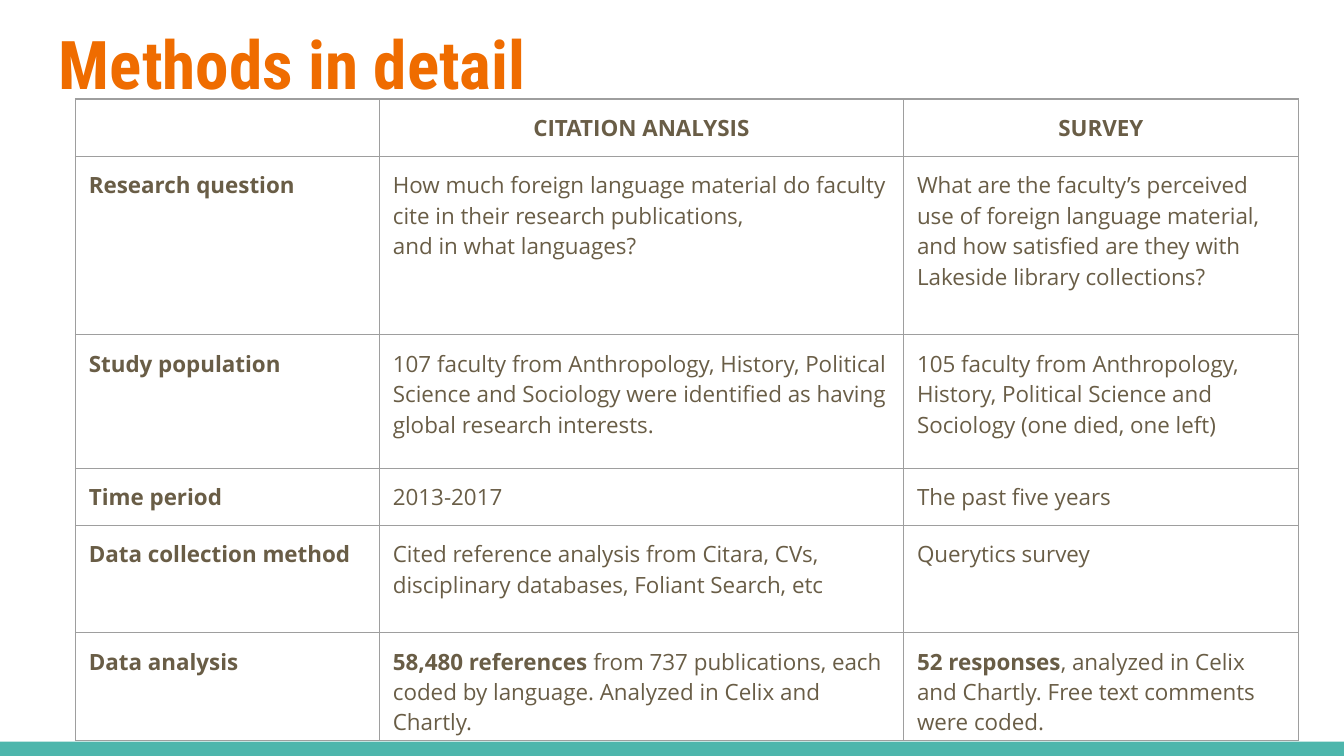
import pptx
import pptx.dml.color
import pptx.enum.shapes
import pptx.enum.text
import pptx.oxml.ns
import pptx.util
from lxml import etree

Pt = pptx.util.Pt
qn = pptx.oxml.ns.qn

# Content: a cell is a list of paragraphs, a paragraph a list of (text, bold) runs
TITLE = "Methods in detail"
HEADERS = ["", "CITATION ANALYSIS", "SURVEY"]
ROWS = [
    ("Research question",
     [[("How much foreign language material do faculty cite in their "
        "research publications,", False)],
      [("and in what languages?", False)]],
     [[("What are the faculty’s perceived use of foreign language material, "
        "and how satisfied are they with Lakeside library collections?", False)]]),
    ("Study population",
     [[("107 faculty from Anthropology, History, Political Science and "
        "Sociology were identified as having global research interests.", False)]],
     [[("105 faculty from Anthropology, History, Political Science and "
        "Sociology (one died, one left)", False)]]),
    ("Time period",
     [[("2013-2017", False)]],
     [[("The past five years", False)]]),
    ("Data collection method",
     [[("Cited reference analysis from Citara, CVs, disciplinary databases, "
        "Foliant Search, etc", False)]],
     [[("Querytics survey", False)]]),
    ("Data analysis",
     [[("58,480 references", True),
       (" from 737 publications, each coded by language. "
        "Analyzed in Celix and Chartly.", False)]],
     [[("52 responses", True),
       (", analyzed in Celix and Chartly. Free text comments were coded.", False)]]),
]

# Layout and style, in points
WIDTH, HEIGHT = 720, 405
BAR_HEIGHT = 7.7
TABLE_LEFT, TABLE_TOP = 40.4, 53.1
COLUMN_WIDTHS = [162.9, 280.8, 211.5]
ROW_HEIGHTS = [30.7, 95.6, 71.6, 30.6, 57.4, 47]
INSET = 7.2
ORANGE, BROWN, TEAL, GRAY = "EF6C00", "695D46", "4DB6AC", "9E9E9E"


def color(value):
    return pptx.dml.color.RGBColor.from_string(value)


def style_font(font, name, size, value, bold):
    font.name, font.size, font.bold = name, Pt(size), bold
    font.color.rgb = color(value)


def set_margins(target):
    target.margin_left = target.margin_right = Pt(INSET)
    target.margin_top = target.margin_bottom = Pt(INSET)


def add_borders(cell):
    properties = cell._tc.get_or_add_tcPr()
    for index, side in enumerate(("lnL", "lnR", "lnT", "lnB")):
        line = etree.Element(qn("a:" + side), w=str(Pt(0.75)))
        fill = etree.SubElement(line, qn("a:solidFill"))
        etree.SubElement(fill, qn("a:srgbClr"), val=GRAY)
        properties.insert(index, line)


def fill_cell(cell, paragraphs, alignment):
    set_margins(cell)
    cell.fill.background()
    add_borders(cell)
    for index, runs in enumerate(paragraphs):
        frame = cell.text_frame
        paragraph = frame.add_paragraph() if index else frame.paragraphs[0]
        paragraph.alignment = alignment
        for text, bold in runs:
            if text:
                run = paragraph.add_run()
                run.text = text
                style_font(run.font, "Open Sans", 12, BROWN, bold)
            else:  # keeps an empty cell from stretching its row
                etree.SubElement(paragraph._p, qn("a:endParaRPr"), sz="1200")


presentation = pptx.Presentation()
presentation.slide_width, presentation.slide_height = Pt(WIDTH), Pt(HEIGHT)
slide = presentation.slides.add_slide(presentation.slide_layouts[6])

# Footer bar
bar = slide.shapes.add_shape(
    pptx.enum.shapes.MSO_SHAPE.RECTANGLE,
    0, Pt(HEIGHT - BAR_HEIGHT), Pt(WIDTH), Pt(BAR_HEIGHT))
bar.shadow.inherit = False
bar.fill.solid()
bar.fill.fore_color.rgb = color(TEAL)
bar.line.fill.background()

# Title
title = slide.shapes.add_textbox(Pt(24.5), Pt(5), Pt(671), Pt(55.4))
title_frame = title.text_frame
title_frame.word_wrap = True
set_margins(title_frame)
title_frame.text = TITLE
style_font(title_frame.paragraphs[0].runs[0].font, "Roboto Condensed", 36, ORANGE, True)

# Table
grid = [[[[(header, True)]] for header in HEADERS]]
grid += [[[[(label, True)]], citation, survey] for label, citation, survey in ROWS]
table = slide.shapes.add_table(
    len(grid), len(HEADERS), Pt(TABLE_LEFT), Pt(TABLE_TOP),
    Pt(sum(COLUMN_WIDTHS)), Pt(sum(ROW_HEIGHTS))).table
table.first_row = table.horz_banding = False
for column, width in zip(table.columns, COLUMN_WIDTHS):
    column.width = Pt(width)
for row, height in zip(table.rows, ROW_HEIGHTS):
    row.height = Pt(height)
for row_index, cells in enumerate(grid):
    alignment = pptx.enum.text.PP_ALIGN.LEFT if row_index else pptx.enum.text.PP_ALIGN.CENTER
    for column_index, paragraphs in enumerate(cells):
        fill_cell(table.cell(row_index, column_index), paragraphs, alignment)

presentation.save("out.pptx")
